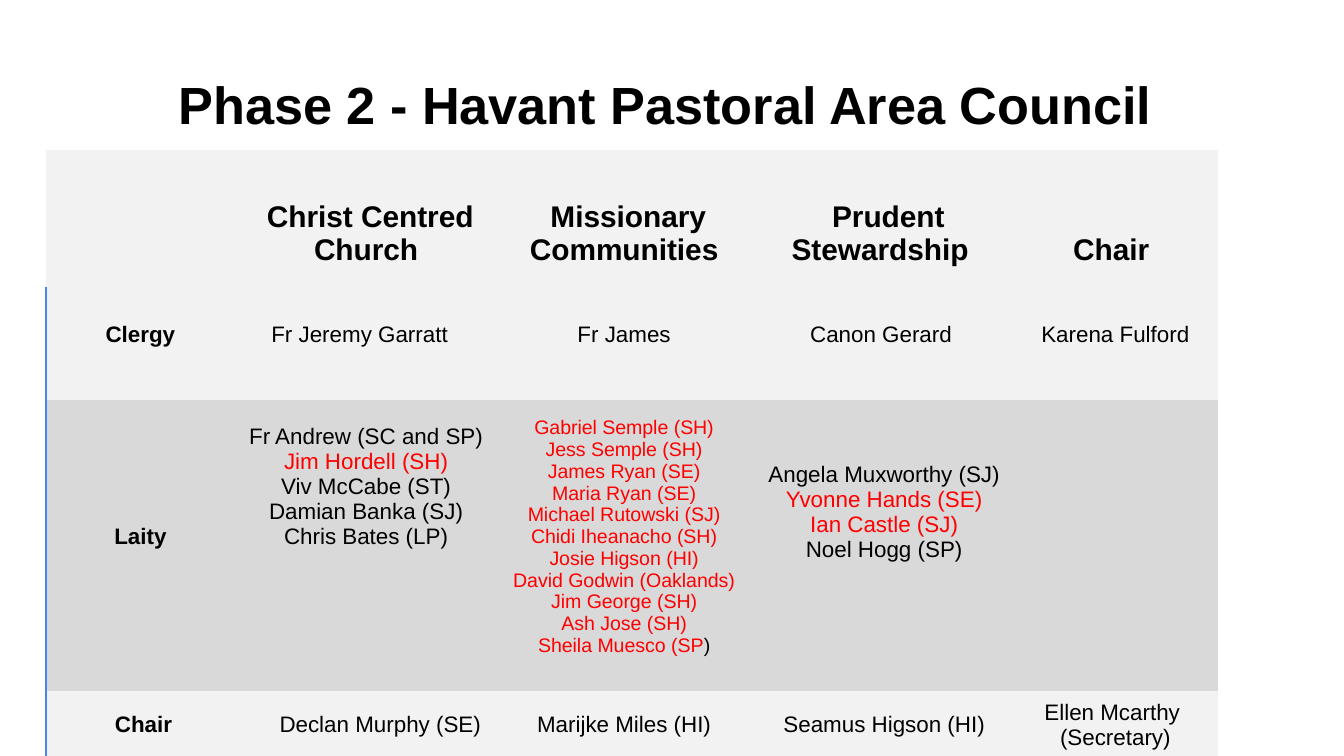
from dataclasses import dataclass

from lxml.etree import SubElement
from pptx import Presentation
from pptx.dml.color import RGBColor
from pptx.enum.text import MSO_ANCHOR as Anchor, MSO_AUTO_SIZE as AutoSize, PP_ALIGN as Align
from pptx.oxml.ns import qn
from pptx.util import Inches, Pt

BLACK = RGBColor(0x00, 0x00, 0x00)
RED = RGBColor(0xFF, 0x00, 0x00)
PALE = RGBColor(0xF2, 0xF2, 0xF2)
GREY = RGBColor(0xD9, 0xD9, 0xD9)
BLUE = RGBColor(0x42, 0x85, 0xF4)
FONT = "Arial"

PAGE_WIDTH = 10
PAGE_HEIGHT = PAGE_WIDTH * 9 / 16
LEFT = 0.034 * PAGE_WIDTH
TABLE_TOP = 1.115
COLUMNS = (1.44, 1.92, 1.92, 1.95, 1.49)
ROWS = (1.02, 0.84, 2.17, 0.63)


@dataclass(frozen=True)
class Span:
    text: str
    color: RGBColor = BLACK


@dataclass(frozen=True)
class Entry:
    lines: tuple = ()  # each line is a tuple of spans
    size: float = 12
    bold: bool = False
    anchor: Anchor = Anchor.MIDDLE
    align: Align = Align.CENTER
    margins: tuple = (0.07, 0.02, 0.1, 0.15)  # left, top, right, bottom


def plain(*texts: str, **options) -> Entry:
    return Entry(tuple((Span(text),) for text in texts), **options)


def red(*texts: str) -> tuple:
    return tuple((Span(text, RED),) for text in texts)


def heading(text: str) -> Entry:
    return plain(text, size=16, bold=True, anchor=Anchor.BOTTOM)


def label(text: str) -> Entry:
    return plain(text, bold=True)


def add_span(para, span: Span, size: float, bold: bool) -> None:
    run = para.add_run()
    run.text = span.text
    run.font.name = FONT
    run.font.size = Pt(size)
    run.font.bold = bold
    run.font.color.rgb = span.color


def set_borders(cell, left_color: RGBColor | None) -> None:
    properties = cell._tc.get_or_add_tcPr()
    for side in ("L", "R", "T", "B"):
        line = SubElement(properties, qn(f"a:ln{side}"), w=str(Pt(1)))
        if side == "L" and left_color is not None:
            fill = SubElement(line, qn("a:solidFill"))
            SubElement(fill, qn("a:srgbClr"), val=str(left_color))
        else:
            SubElement(line, qn("a:noFill"))


def fill_cell(cell, entry: Entry, color: RGBColor, left_color: RGBColor | None) -> None:
    set_borders(cell, left_color)
    cell.fill.solid()
    cell.fill.fore_color.rgb = color
    cell.vertical_anchor = entry.anchor
    (cell.margin_left, cell.margin_top,
     cell.margin_right, cell.margin_bottom) = map(Inches, entry.margins)
    frame = cell.text_frame
    for index, line in enumerate(entry.lines):
        para = frame.add_paragraph() if index else frame.paragraphs[0]
        para.alignment = entry.align
        for span in line:
            add_span(para, span, entry.size, entry.bold)


COUNCIL = (
    (Entry(), heading(" Christ Centred Church"), heading(" Missionary Communities"),
     heading(" Prudent Stewardship "), heading("Chair ")),
    (label("Clergy"), plain("Fr Jeremy Garratt ", margins=(0.07, 0.02, 0.15, 0.15)),
     plain(" Fr James "), plain("Canon Gerard "), plain("Karena Fulford")),
    (label("Laity"),
     Entry(((Span("Fr Andrew (SC and SP)"),),
            *red("Jim Hordell (SH)"),
            (Span("Viv McCabe (ST)"),),
            (Span("Damian Banka (SJ)"),),
            (Span("Chris Bates (LP)"),)),
           margins=(0.07, 0.02, 0.1, 0.9)),
     Entry((*red("Gabriel Semple (SH)", "Jess Semple (SH)", "James Ryan (SE)",
                 "Maria Ryan (SE)", "Michael Rutowski (SJ)", "Chidi Iheanacho (SH)",
                 "Josie Higson (HI)", "David Godwin (Oaklands)", "Jim George (SH)",
                 "Ash Jose (SH)"),
            (Span("Sheila Muesco (SP", RED), Span(")"))),
           size=10.5),
     Entry(((Span("Angela Muxworthy (SJ)"),),
            *red("Yvonne Hands (SE)", "Ian Castle (SJ)"),
            (Span("Noel Hogg (SP)"),)),
           margins=(0.07, 0.02, 0.1, 0.52)),
     Entry()),
    (label(" Chair"),
     plain("Declan Murphy (SE)", align=Align.LEFT, margins=(0.3, 0.02, 0.05, 0.15)),
     plain("Marijke Miles (HI)"), plain("Seamus Higson (HI)"),
     plain("Ellen Mcarthy ", "(Secretary)")),
)
ROW_COLORS = (PALE, PALE, GREY, PALE)


def add_title(page) -> None:
    title = page.shapes.title
    title.left, title.top = Inches(LEFT), Inches(0.485)
    title.width, title.height = Inches(PAGE_WIDTH - 2 * LEFT), Inches(0.63)
    frame = title.text_frame
    frame.word_wrap = True
    frame.auto_size = AutoSize.NONE
    frame.vertical_anchor = Anchor.MIDDLE
    frame.margin_left = frame.margin_right = Inches(0.1)
    frame.margin_top = frame.margin_bottom = Inches(0.1)
    para = frame.paragraphs[0]
    para.alignment = Align.CENTER
    para.line_spacing = 0.9
    add_span(para, Span("Phase 2 - Havant Pastoral Area Council "), 28, True)


def add_council_table(page) -> None:
    table = page.shapes.add_table(
        len(ROWS), len(COLUMNS), Inches(LEFT), Inches(TABLE_TOP),
        Inches(sum(COLUMNS)), Inches(sum(ROWS))).table
    table.first_row = table.horz_banding = False
    for column, width in zip(table.columns, COLUMNS):
        column.width = Inches(width)
    for row, height in zip(table.rows, ROWS):
        row.height = Inches(height)
    for r, entries in enumerate(COUNCIL):
        for c, entry in enumerate(entries):
            # A blue rule runs down the left of the rows below the headings
            left_color = BLUE if r > 0 and c == 0 else None
            fill_cell(table.cell(r, c), entry, ROW_COLORS[r], left_color)


def main() -> None:
    deck = Presentation()
    deck.slide_width, deck.slide_height = Inches(PAGE_WIDTH), Inches(PAGE_HEIGHT)
    page = deck.slides.add_slide(deck.slide_layouts[5])  # title only
    add_title(page)
    add_council_table(page)
    deck.save("out.pptx")


if __name__ == "__main__":
    main()
